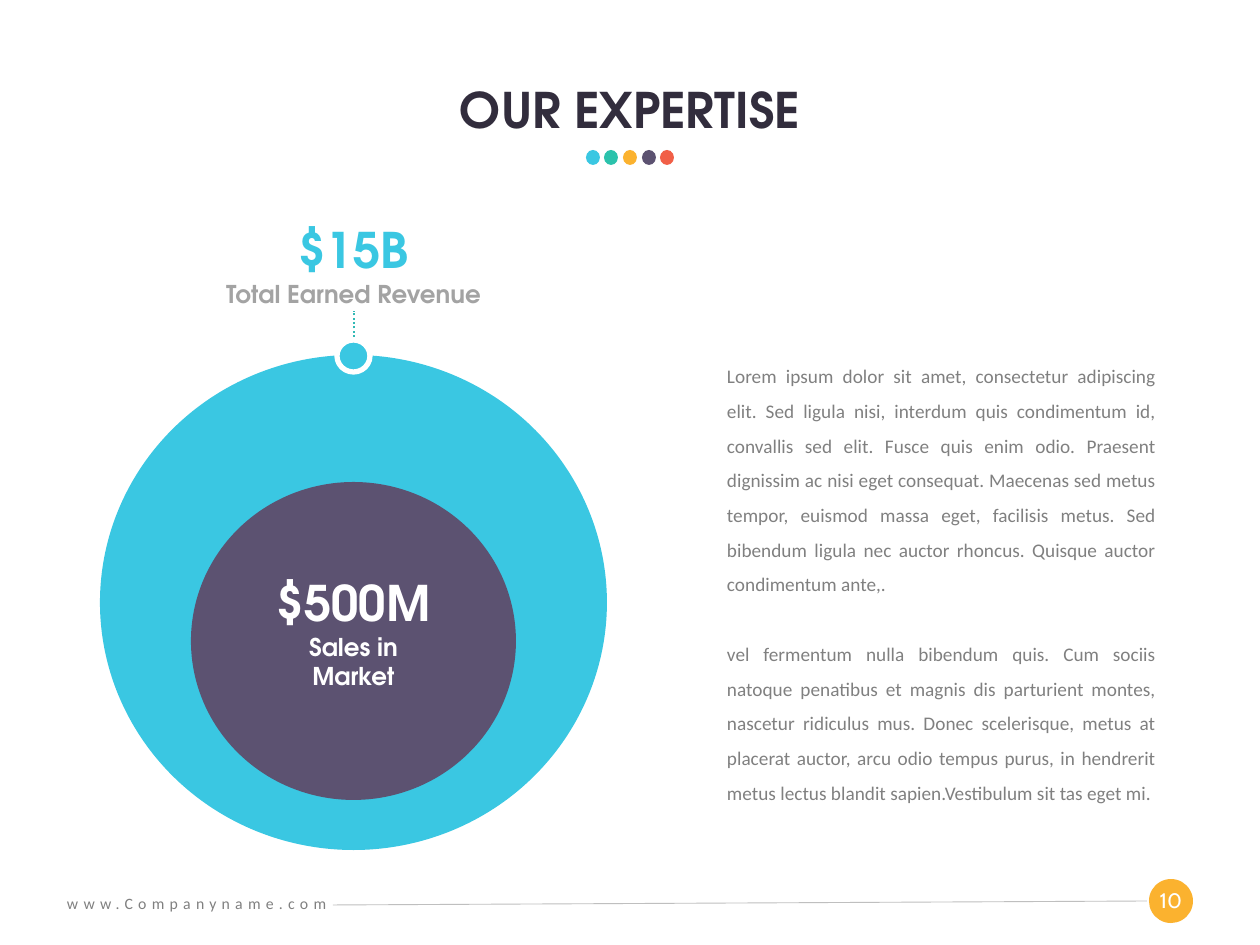
from dataclasses import dataclass

from lxml import etree
from pptx import Presentation, util as u
from pptx.dml.color import RGBColor
from pptx.enum import dml, shapes, text
from pptx.oxml.ns import qn

SCALE = 914400 / 126  # EMU per px
WIDTH, HEIGHT = 1260, 945
PAD = (13, 6, 13, 6)  # usual text inset: left, top, right, bottom
BADGE_PAD = (0, 6, 0, 6)  # full width for the page number
NO_PAD = (0, 0, 0, 0)
CENTER, JUSTIFY = text.PP_ALIGN.CENTER, text.PP_ALIGN.JUSTIFY


class Theme:
    sky, teal, amber, plum, coral = "3AC7E2", "2BC2AC", "FBB22F", "5C5271", "F15F47"
    dark, gray, label, rule, leader, white = (
        "322D3D", "808080", "A3A3A3", "BFBFBF", "31B9B5", "FFFFFF")
    head_font, body_font, number_font = "TeX Gyre Adventor", "Calibri", "Cabin"
    big, medium, number, body, footer = 28, 14, 12, 11, 9


@dataclass
class Para:
    words: str
    size: int
    color: str
    font: str = Theme.head_font
    bold: bool = False
    align: text.PP_ALIGN = CENTER
    leading: float = 1.0
    before: int = 0
    tracking: int = 0


BODY = (
    "Lorem ipsum dolor sit amet, consectetur adipiscing elit. Sed ligula nisi, "
    "interdum quis condimentum id, convallis sed elit. Fusce quis enim odio. "
    "Praesent dignissim ac nisi eget consequat. Maecenas sed metus tempor, euismod "
    "massa eget, facilisis metus. Sed bibendum ligula nec auctor rhoncus. Quisque "
    "auctor condimentum ante,.",
    "vel fermentum nulla bibendum quis. Cum sociis natoque penatibus et magnis dis "
    "parturient montes, nascetur ridiculus mus. Donec scelerisque, metus at placerat "
    "auctor, arcu odio tempus purus, in hendrerit metus lectus blandit "
    "sapien.Vestibulum sit tas eget mi.",
)


def px(n):
    return u.Emu(round(n * SCALE))


def rgb(color):
    return RGBColor.from_string(color)


def add_filled(s, kind, box, fill, outline=None, weight=0):
    sp = s.shapes.add_shape(kind, *map(px, box))
    sp.shadow.inherit = False
    sp.fill.solid()
    sp.fill.fore_color.rgb = rgb(fill)
    if outline:
        sp.line.color.rgb = rgb(outline)
        sp.line.width = u.Pt(weight)
    else:
        sp.line.fill.background()
    return sp


def add_line(s, start, end, color, weight, dash=None):
    ln = s.shapes.add_connector(
        shapes.MSO_CONNECTOR.STRAIGHT, *map(px, start + end))
    ln.line.color.rgb = rgb(color)
    ln.line.width = u.Pt(weight)
    if dash:
        ln.line.dash_style = dash
    etree.SubElement(ln._element.spPr, qn("a:effectLst"))


def add_text(s, box, paras, pad=PAD, anchor=text.MSO_ANCHOR.TOP, wrap=True):
    tf = s.shapes.add_textbox(*map(px, box)).text_frame
    tf.word_wrap = wrap
    tf.vertical_anchor = anchor
    tf.margin_left, tf.margin_top, tf.margin_right, tf.margin_bottom = map(px, pad)
    for i, para in enumerate(paras):
        p = tf.add_paragraph() if i else tf.paragraphs[0]
        p.alignment = para.align
        p.line_spacing = para.leading
        p.space_before = u.Pt(para.before)
        r = p.add_run()
        r.text = para.words
        r.font.size = u.Pt(para.size)
        r.font.name = para.font
        r.font.bold = para.bold
        r.font.color.rgb = rgb(para.color)
        if para.tracking:
            r.font._element.set("spc", str(para.tracking * 100))


def add_figure(s, box, amount, captions, amount_color, caption_color):
    """A large amount with its caption lines below."""
    paras = [Para(amount, Theme.big, amount_color, bold=True, leading=1.1)]
    paras += [Para(c, Theme.medium, caption_color, bold=True) for c in captions]
    add_text(s, box, paras, NO_PAD)


def add_footer(s):
    badge = add_filled(s, shapes.MSO_SHAPE.ROUNDED_RECTANGLE,
                       (1149, 879, 44, 44), Theme.amber)
    badge.adjustments[0] = 0.5
    add_text(s, (1147, 882, 48, 38),
             [Para("10", Theme.number, Theme.white, Theme.number_font)],
             BADGE_PAD, wrap=False)
    add_line(s, (333, 905), (1147, 901), Theme.rule, 0.5)
    add_text(s, (54, 888, 403, 32),
             [Para("www.Companyname.com", Theme.footer, Theme.gray, Theme.body_font,
                   align=text.PP_ALIGN.LEFT, tracking=3)])


def add_heading(s):
    add_text(s, (0, 35, WIDTH, 110),
             [Para("OUR EXPERTISE", Theme.big, Theme.dark, bold=True, leading=0.9)],
             anchor=text.MSO_ANCHOR.BOTTOM)
    dots = (Theme.sky, Theme.teal, Theme.amber, Theme.plum, Theme.coral)
    for i, color in enumerate(dots):
        add_filled(s, shapes.MSO_SHAPE.OVAL,
                   (586 + round(18.5 * i), 150, 14, 15), color)


def add_circles(s):
    add_figure(s, (54, 214, 599, 95), "$15B", ["Total Earned Revenue"],
               Theme.sky, Theme.label)
    add_line(s, (354, 346), (354, 311), Theme.leader, 1.25,
             dml.MSO_LINE.ROUND_DOT)
    oval = shapes.MSO_SHAPE.OVAL
    add_filled(s, oval, (100, 355, 507, 495), Theme.sky)
    add_filled(s, oval, (191, 482, 325, 318), Theme.plum)
    add_filled(s, oval, (337, 340, 33, 32), Theme.sky, Theme.white, 3)
    add_figure(s, (54, 567, 599, 141), "$500M", ["Sales in", "Market"],
               Theme.white, Theme.white)


def add_body(s):
    paras = [Para(words, Theme.body, Theme.gray, Theme.body_font,
                  align=JUSTIFY, leading=1.5, before=20 * i)
             for i, words in enumerate(BODY)]
    add_text(s, (714, 347, 462, 466), paras, (13, 6, 20, 5))


def main():
    prs = Presentation()
    prs.slide_width, prs.slide_height = px(WIDTH), px(HEIGHT)
    s = prs.slides.add_slide(prs.slide_layouts[6])
    add_footer(s)
    add_heading(s)
    add_circles(s)
    add_body(s)
    prs.save("out.pptx")


if __name__ == "__main__":
    main()
